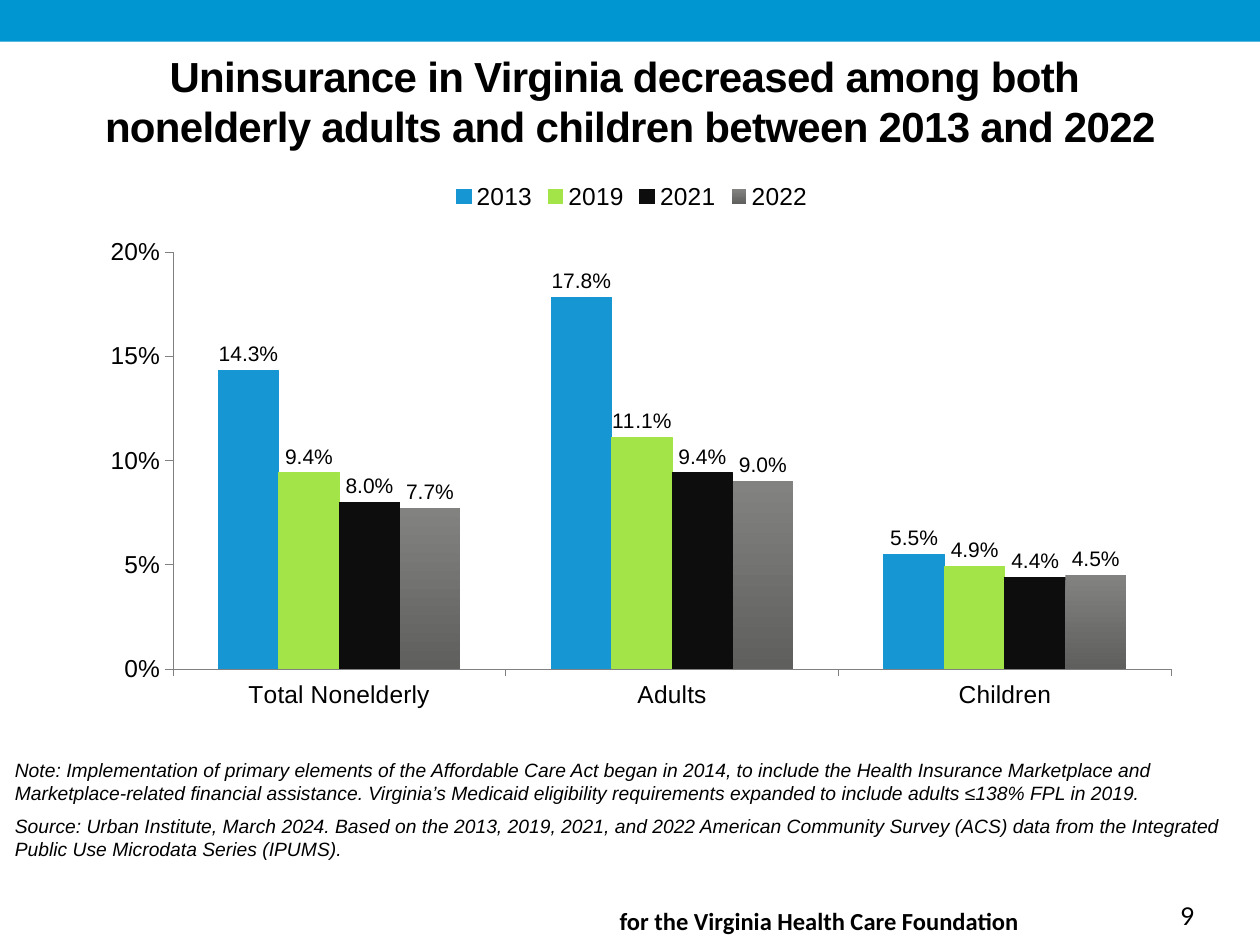
from lxml import etree
from pptx import Presentation
from pptx.chart.data import CategoryChartData
from pptx.dml.color import RGBColor
from pptx.enum.chart import XL_CHART_TYPE, XL_LABEL_POSITION, XL_LEGEND_POSITION, XL_TICK_MARK
from pptx.enum.shapes import MSO_SHAPE
from pptx.enum.text import PP_ALIGN
from pptx.oxml.ns import qn
from pptx.util import Cm, Pt

RECT = MSO_SHAPE.RECTANGLE
COLUMNS = XL_CHART_TYPE.COLUMN_CLUSTERED
OUTSIDE_END = XL_LABEL_POSITION.OUTSIDE_END
LEGEND_TOP = XL_LEGEND_POSITION.TOP
TICK_OUT, TICK_NONE = XL_TICK_MARK.OUTSIDE, XL_TICK_MARK.NONE
LEFT, CENTER = PP_ALIGN.LEFT, PP_ALIGN.CENTER

BAND = RGBColor(0x00, 0x96, 0xD2)
BLUE = RGBColor(0x16, 0x96, 0xD2)
GREEN = RGBColor(0xA3, 0xE4, 0x48)
INK = RGBColor(0x0D, 0x0D, 0x0D)
GRAY = RGBColor(0x82, 0x83, 0x81)
DARK_GRAY = RGBColor(0x5F, 0x5F, 0x5D)
AXIS = RGBColor(0x80, 0x80, 0x80)
BLACK = RGBColor(0x00, 0x00, 0x00)

CATEGORIES = ["Total Nonelderly", "Adults", "Children"]
SERIES = [
    ("2013", (0.143, 0.178, 0.055), [BLUE]),
    ("2019", (0.094, 0.111, 0.049), [GREEN]),
    ("2021", (0.08, 0.094, 0.044), [INK]),
    ("2022", (0.077, 0.09, 0.045), [GRAY, DARK_GRAY]),
]
PLOT_LAYOUT = {"layoutTarget": "inner", "xMode": "edge", "yMode": "edge",
               "x": 0.1, "y": 0.14, "w": 0.87, "h": 0.7}
TITLE = ["Uninsurance in Virginia decreased among both ",
         "nonelderly adults and children between 2013 and 2022"]
NOTES = [
    "Note: Implementation of primary elements of the Affordable Care Act began in 2014, "
    "to include the Health Insurance Marketplace and Marketplace-related financial assistance. "
    "Virginia’s Medicaid eligibility requirements expanded to include adults ≤138% FPL in 2019.",
    "Source: Urban Institute, March 2024. Based on the 2013, 2019, 2021, and 2022 American "
    "Community Survey (ACS) data from the Integrated Public Use Microdata Series (IPUMS).",
]


class SlideBuilder:
    """Holds the text style and the current slide, and draws each kind of element."""

    def __init__(self, slide, font="Arial", color=BLACK):
        self.s, self.font, self.color = slide, font, color

    def style(self, font, size, name=None, bold=False, italic=False):
        font.name, font.size = name or self.font, Pt(size)
        font.bold, font.italic = bold, italic
        font.color.rgb = self.color

    def band(self, x, y, w, h, color):
        sp = self.s.shapes.add_shape(RECT, Cm(x), Cm(y), Cm(w), Cm(h))
        sp.shadow.inherit = False
        sp.fill.solid()
        sp.fill.fore_color.rgb = color
        sp.line.fill.background()

    def text(self, x, y, w, h, paragraphs, size, align=LEFT, gap=0, inset=None, spacing=0, **style):
        tf = self.s.shapes.add_textbox(Cm(x), Cm(y), Cm(w), Cm(h)).text_frame
        tf.word_wrap = True
        if inset is not None:
            tf.margin_left = tf.margin_right = tf.margin_top = tf.margin_bottom = Cm(inset)
        for i, lines in enumerate(paragraphs):
            p = tf.add_paragraph() if i else tf.paragraphs[0]
            p.alignment = align
            p.space_before = Pt(gap if i else 0)
            for j, line in enumerate(lines):
                if j:
                    p.add_line_break()
                r = p.add_run()
                r.text = line
                self.style(r.font, size, **style)
                if spacing:
                    r.font._element.set("spc", str(round(spacing * 100)))

    def column_chart(self, x, y, w, h, categories, series, layout):
        data = CategoryChartData(number_format="0.0%")
        data.categories = categories
        for name, values, _ in series:
            data.add_series(name, values)
        chart = self.s.shapes.add_chart(COLUMNS, Cm(x), Cm(y), Cm(w), Cm(h), data).chart
        self.style(chart.font, 14)
        chart.has_title = False
        chart.has_legend = True
        chart.legend.position = LEGEND_TOP
        chart.legend.include_in_layout = False
        plot = chart.plots[0]
        plot.gap_width, plot.overlap, plot.vary_by_categories = 150, 0, False
        for ser, (_, _, colors) in zip(plot.series, series):
            self.paint_series(ser, colors)
        for axis in (chart.category_axis, chart.value_axis):
            axis.has_major_gridlines = False
            axis.major_tick_mark, axis.minor_tick_mark = TICK_OUT, TICK_NONE
            axis.format.line.color.rgb = AXIS
            axis.format.line.width = Pt(0.25)
        axis = chart.value_axis
        axis.minimum_scale, axis.maximum_scale, axis.major_unit = 0, 0.2, 0.05
        axis.tick_labels.number_format = "0%"
        axis.tick_labels.number_format_is_linked = False
        self.place_plot(chart, layout)

    def paint_series(self, ser, colors):
        fill = ser.format.fill
        if len(colors) > 1:
            fill.gradient()
            fill.gradient_angle = 270
            for stop, shade in zip(fill.gradient_stops, colors):
                stop.color.rgb = shade
        else:
            fill.solid()
            fill.fore_color.rgb = colors[0]
            ser.format.line.color.rgb = colors[0]
            ser.format.line.width = Pt(0.5)
        labels = ser.data_labels
        labels.show_value = True
        labels.position = OUTSIDE_END
        labels.number_format, labels.number_format_is_linked = "0.0%", False
        self.style(labels.font, 12)

    def place_plot(self, chart, layout):
        area = chart.element.find(".//" + qn("c:plotArea"))
        for old in area.findall(qn("c:layout")):
            area.remove(old)
        holder = etree.Element(qn("c:layout"))
        manual = etree.SubElement(holder, qn("c:manualLayout"))
        for tag, value in layout.items():
            etree.SubElement(manual, qn("c:" + tag)).set("val", str(value))
        area.insert(0, holder)


def main():
    prs = Presentation()
    prs.slide_width, prs.slide_height = Cm(25.4), Cm(19.05)
    b = SlideBuilder(prs.slides.add_slide(prs.slide_layouts[6]))
    b.band(0, 0, 25.4, 0.84, BAND)
    b.text(23.55, 18.03, 1.85, 0.86, [["9"]], 14, name="Lato")
    b.column_chart(1.17, 3.4, 23.14, 12.01, CATEGORIES, SERIES, PLOT_LAYOUT)
    b.text(1.27, 1.02, 22.86, 3.61, [TITLE], 24, align=CENTER, inset=0, spacing=-0.4, bold=True)
    b.text(12.24, 18.14, 12.32, 0.66, [["for the Virginia Health Care Foundation"]], 14,
           name="Calibri", bold=True)
    b.text(0.05, 15.16, 25.4, 2.36, [[note] for note in NOTES], 11, gap=5.5, italic=True)
    prs.save("out.pptx")


if __name__ == "__main__":
    main()
